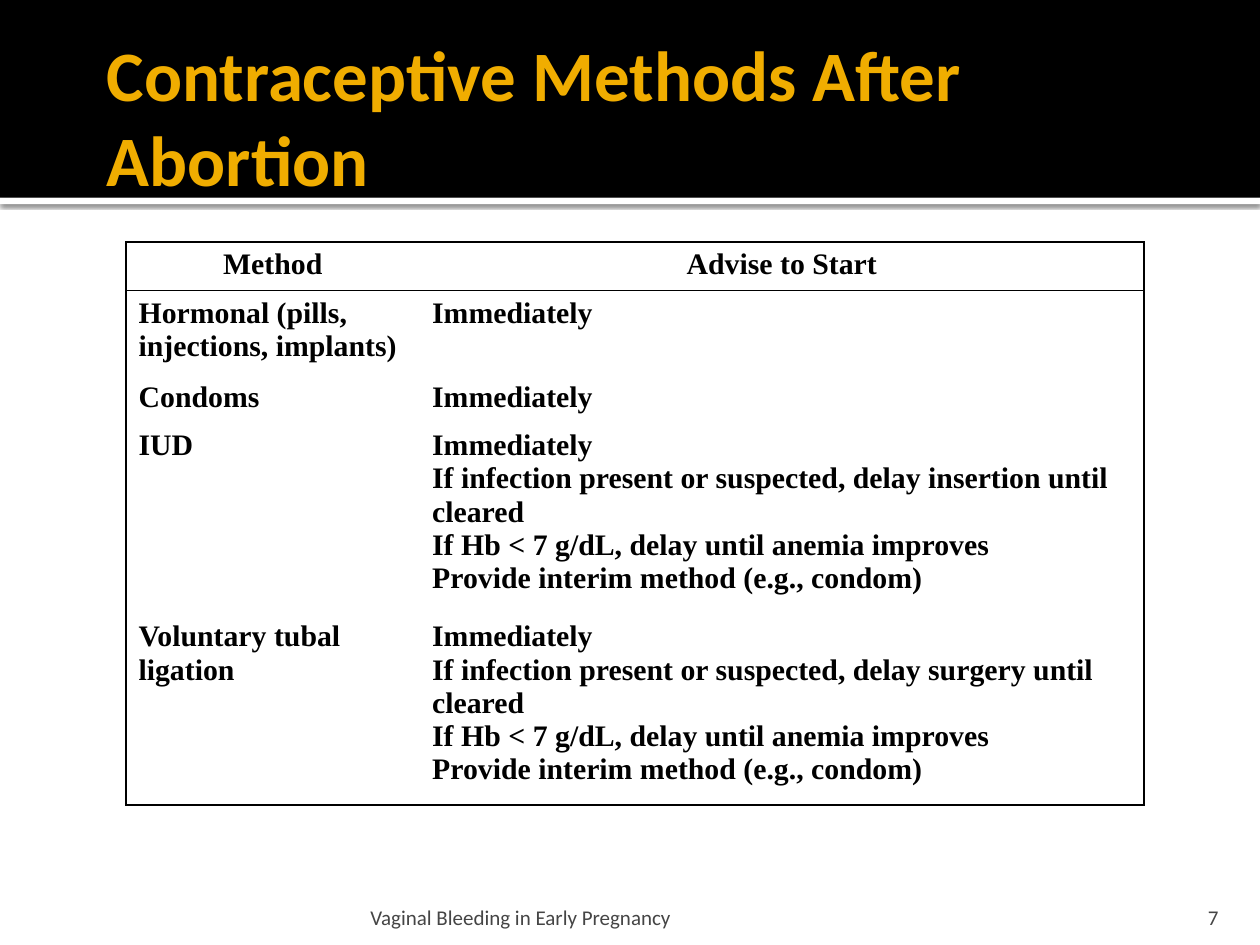
from lxml import etree
from pptx import Presentation
from pptx.dml.color import RGBColor as RGB
from pptx.enum.shapes import MSO_SHAPE as Shape
from pptx.enum.text import MSO_ANCHOR as Anchor, PP_ALIGN as Align
from pptx.oxml import parse_xml
from pptx.oxml.ns import nsdecls, qn
from pptx.util import Inches, Pt

# Content
TITLE = "Contraceptive Methods After Abortion"
FOOTER = "Vaginal Bleeding in Early Pregnancy"
NUMBER = "7"


def delay(act):
    return ["Immediately",
            f"If infection present or suspected, delay {act} until cleared",
            "If Hb < 7 g/dL, delay until anemia improves",
            "Provide interim method (e.g., condom)"]


ROWS = [
    (["Method"], ["Advise to Start"]),
    (["Hormonal (pills, injections, implants)"], ["Immediately"]),
    (["Condoms"], ["Immediately"]),
    (["IUD"], delay("insertion")),
    (["Voluntary tubal ligation"], delay("surgery")),
]
COLS = [2.33, 5.75]
LINES = [1, 2, 1, 5, 5]  # text lines in each row
LINE, PAD = 0.26, 0.1
COLORS = {"white": "FFFFFF", "black": "000000", "gold": "F0AD00", "gray": "454545"}


def write(frame, lines, size, color, font="Calibri", bold=False, align=Align.LEFT):
    frame.word_wrap = True
    for i, line in enumerate(lines):
        par = frame.paragraphs[0] if i == 0 else frame.add_paragraph()
        par.alignment = align
        run = par.add_run()
        run.text = line
        run.font.name, run.font.size, run.font.bold = font, Pt(size), bold
        run.font.color.rgb = RGB.from_string(COLORS[color])


def add_text(box, text, size, color, anchor, pads, **style):
    frame = slide.shapes.add_textbox(*map(Inches, box)).text_frame
    frame.vertical_anchor = anchor
    (frame.margin_left, frame.margin_top,
     frame.margin_right, frame.margin_bottom) = map(Inches, pads)
    write(frame, [text], size, color, **style)


def add_band(top, height, color):
    band = slide.shapes.add_shape(
        Shape.RECTANGLE, 0, Inches(top), prs.slide_width, Inches(height))
    band.shadow.inherit = False
    band.fill.solid()
    band.fill.fore_color.rgb = RGB.from_string(COLORS[color])
    band.line.fill.background()
    return band


def set_edges(cell, edges):
    props = cell._tc.get_or_add_tcPr()
    for i, side in enumerate("LRTB"):
        fill = (f'<a:solidFill><a:srgbClr val="{COLORS["black"]}"/></a:solidFill>'
                if side in edges else "<a:noFill/>")
        props.insert(i, parse_xml(
            f'<a:ln{side} {nsdecls("a")} w="{Pt(1)}">{fill}</a:ln{side}>'))


prs = Presentation()
prs.slide_width, prs.slide_height = Inches(10), Inches(7.5)
slide = prs.slides.add_slide(prs.slide_layouts[6])

# Header bands, the white one with a soft shadow
strip = add_band(1.57, 0.05, "white")
effects = strip._element.spPr.find(qn("a:effectLst"))
shade = etree.SubElement(effects, qn("a:outerShdw"), blurRad=str(Pt(2.5)),
                         dist=str(Pt(0.8)), dir="5400000", rotWithShape="0")
tint = etree.SubElement(shade, qn("a:srgbClr"), val=COLORS["black"])
etree.SubElement(tint, qn("a:alpha"), val="60000")
add_band(0, 1.57, "black")

# Title and footer
add_text((0.75, 0.25, 8.5, 1.33), TITLE, 40.5, "gold", Anchor.MIDDLE,
         (0.1, 0.05, 0.05, 0.05), bold=True)
add_text((2.89, 7.08, 6.02, 0.3), FOOTER, 12, "gray", Anchor.BOTTOM,
         (0.05, 0.05, 0.05, 0))
add_text((8.97, 7.08, 0.8, 0.3), NUMBER, 12, "gray", Anchor.BOTTOM,
         (0.1, 0.05, 0.1, 0), align=Align.RIGHT)

# Table with an outer frame and a rule under the header
heights = [n * LINE + PAD for n in LINES]
table = slide.shapes.add_table(
    len(ROWS), len(COLS), Inches(1), Inches(1.92),
    Inches(sum(COLS)), Inches(sum(heights))).table
table.first_row = table.horz_banding = False
for col, width in zip(table.columns, COLS):
    col.width = Inches(width)
for r, (row, height) in enumerate(zip(ROWS, heights)):
    table.rows[r].height = Inches(height)
    for c, lines in enumerate(row):
        cell = table.cell(r, c)
        cell.fill.background()
        write(cell.text_frame, lines, 17, "black", font="Times New Roman",
              bold=True, align=Align.CENTER if r == 0 else Align.LEFT)
        edges = "LR"[c]
        edges += "T" if r < 2 else ""
        edges += "B" if r in (0, len(ROWS) - 1) else ""
        set_edges(cell, edges)

prs.save("out.pptx")
